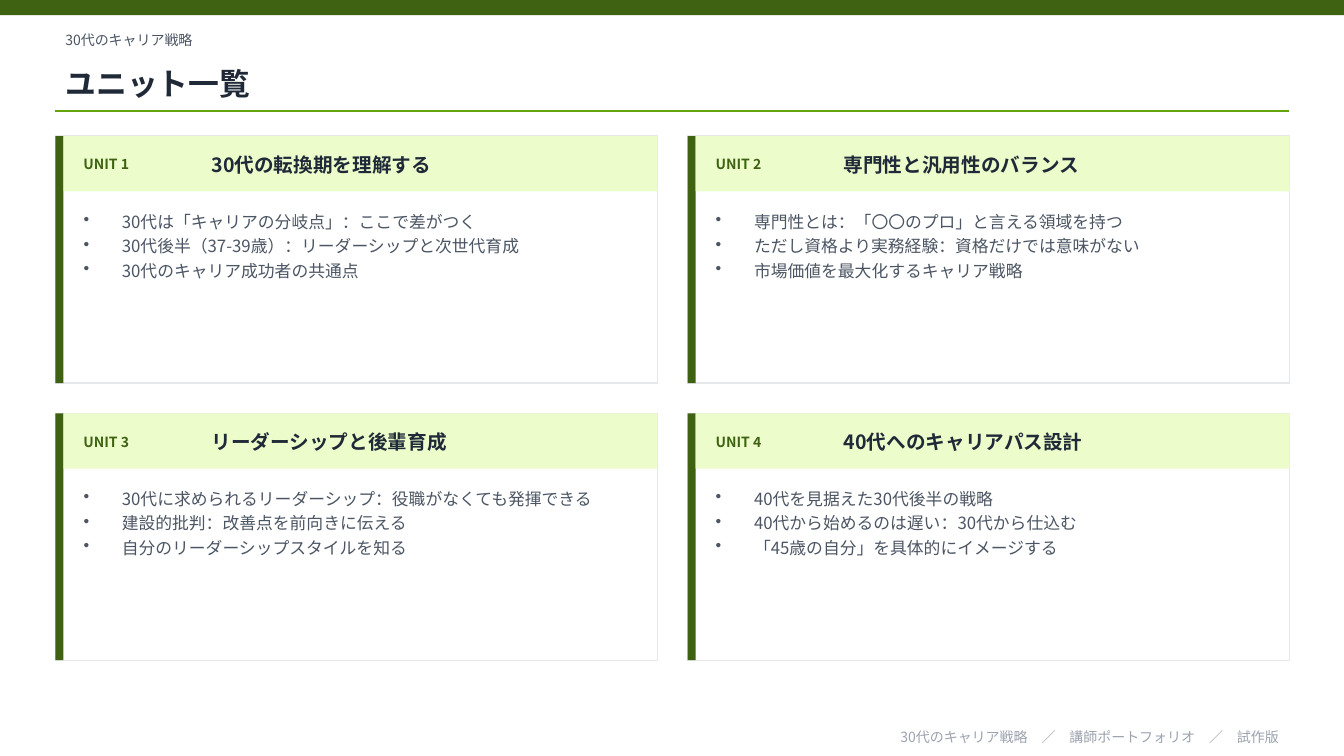
from lxml import etree
from pptx import Presentation
from pptx.dml.color import RGBColor
from pptx.enum.shapes import MSO_CONNECTOR, MSO_SHAPE
from pptx.enum.text import MSO_ANCHOR, MSO_AUTO_SIZE, PP_ALIGN
from pptx.oxml.ns import qn
from pptx.util import Inches, Pt

RECTANGLE = MSO_SHAPE.RECTANGLE
STRAIGHT = MSO_CONNECTOR.STRAIGHT
MIDDLE, TOP = MSO_ANCHOR.MIDDLE, MSO_ANCHOR.TOP
LEFT, RIGHT = PP_ALIGN.LEFT, PP_ALIGN.RIGHT
NO_AUTOFIT = MSO_AUTO_SIZE.NONE

FONT = "Noto Sans CJK JP"
DARK_GREEN = RGBColor(0x3F, 0x62, 0x12)
GREEN = RGBColor(0x65, 0xA3, 0x0D)
PALE_GREEN = RGBColor(0xEC, 0xFC, 0xCB)
WHITE = RGBColor(0xFF, 0xFF, 0xFF)
BORDER = RGBColor(0xE5, 0xE7, 0xEB)
INK = RGBColor(0x1F, 0x29, 0x37)
GRAY = RGBColor(0x4B, 0x55, 0x63)
LIGHT_GRAY = RGBColor(0x9C, 0xA3, 0xAF)

SLIDE_WIDTH = 13.33
MARGIN = 0.55
CONTENT_WIDTH = 12.23
CARDS_TOP = 1.35
CARD_WIDTH, CARD_HEIGHT = 5.97, 2.45
COLUMN_STEP, ROW_STEP = 6.27, 2.75
ACCENT_WIDTH = 0.08
HEADER_HEIGHT = 0.55
BULLET_INDENT = 0.38

UNITS = [
    ("30代の転換期を理解する", [
        "30代は「キャリアの分岐点」：ここで差がつく",
        "30代後半（37-39歳）：リーダーシップと次世代育成",
        "30代のキャリア成功者の共通点",
    ]),
    ("専門性と汎用性のバランス", [
        "専門性とは：「〇〇のプロ」と言える領域を持つ",
        "ただし資格より実務経験：資格だけでは意味がない",
        "市場価値を最大化するキャリア戦略",
    ]),
    ("リーダーシップと後輩育成", [
        "30代に求められるリーダーシップ：役職がなくても発揮できる",
        "建設的批判：改善点を前向きに伝える",
        "自分のリーダーシップスタイルを知る",
    ]),
    ("40代へのキャリアパス設計", [
        "40代を見据えた30代後半の戦略",
        "40代から始めるのは遅い：30代から仕込む",
        "「45歳の自分」を具体的にイメージする",
    ]),
]


def add_run(paragraph, text, size, color, bold=False):
    run = paragraph.add_run()
    run.text = text
    font = run.font
    font.name = FONT
    font.size = Pt(size)
    font.bold = bold
    font.color.rgb = color
    east_asian = etree.SubElement(run._r.get_or_add_rPr(), qn("a:ea"))
    east_asian.set("typeface", FONT)


def prepare_frame(shape, anchor):
    frame = shape.text_frame
    frame.word_wrap = True
    frame.auto_size = NO_AUTOFIT
    frame.vertical_anchor = anchor
    return frame


def add_frame(slide, left, top, width, height, anchor=MIDDLE):
    shape = slide.shapes.add_textbox(Inches(left), Inches(top), Inches(width), Inches(height))
    return prepare_frame(shape, anchor)


def add_label(slide, box, text, size, color, bold=False, alignment=LEFT):
    paragraph = add_frame(slide, *box).paragraphs[0]
    paragraph.alignment = alignment
    add_run(paragraph, text, size, color, bold)


def add_title(slide, text):
    title = slide.shapes.title
    title.left, title.top = Inches(MARGIN), Inches(0.55)
    title.width, title.height = Inches(CONTENT_WIDTH), Inches(0.55)
    paragraph = prepare_frame(title, MIDDLE).paragraphs[0]
    paragraph.alignment = LEFT
    add_run(paragraph, text, 22, INK, True)


def add_rectangle(slide, left, top, width, height, fill, border=None):
    shape = slide.shapes.add_shape(
        RECTANGLE, Inches(left), Inches(top), Inches(width), Inches(height))
    shape.shadow.inherit = False
    shape.fill.solid()
    shape.fill.fore_color.rgb = fill
    if border is None:
        shape.line.fill.background()
    else:
        shape.line.color.rgb = border
        shape.line.width = Pt(1)


def add_rule(slide, left, top, width):
    rule = slide.shapes.add_connector(
        STRAIGHT, Inches(left), Inches(top), Inches(left + width), Inches(top))
    rule.line.color.rgb = GREEN
    rule.line.width = Pt(1)
    etree.SubElement(rule._element.spPr, qn("a:effectLst"))


def add_bullets(slide, left, top, width, height, items):
    frame = add_frame(slide, left, top, width, height, TOP)
    for index, item in enumerate(items):
        paragraph = frame.paragraphs[0] if index == 0 else frame.add_paragraph()
        paragraph.line_spacing = Pt(14.4)
        paragraph.space_after = Pt(3)
        properties = paragraph._p.get_or_add_pPr()
        properties.set("marL", str(Inches(BULLET_INDENT)))
        properties.set("indent", str(-Inches(BULLET_INDENT)))
        etree.SubElement(properties, qn("a:buChar")).set("char", "•")
        add_run(paragraph, item, 12, GRAY)


def add_unit_card(slide, left, top, number, heading, items):
    inner_left = left + ACCENT_WIDTH
    text_left = inner_left + 0.1
    add_rectangle(slide, left, top, CARD_WIDTH, CARD_HEIGHT, WHITE, BORDER)
    add_rectangle(slide, left, top, ACCENT_WIDTH, CARD_HEIGHT, DARK_GREEN)
    add_rectangle(slide, inner_left, top, CARD_WIDTH - ACCENT_WIDTH, HEADER_HEIGHT, PALE_GREEN)
    add_label(slide, (text_left, top + 0.08, 1.2, 0.4), f"UNIT {number}", 10, DARK_GREEN, True)
    add_label(slide, (left + 1.45, top + 0.08, 4.37, 0.4), heading, 14, INK, True)
    add_bullets(slide, text_left, top + 0.7, 5.61, 1.6, items)


def main():
    presentation = Presentation()
    presentation.slide_width = Inches(SLIDE_WIDTH)
    presentation.slide_height = Inches(7.5)
    slide = presentation.slides.add_slide(presentation.slide_layouts.get_by_name("Title Only"))

    add_rectangle(slide, 0, 0, SLIDE_WIDTH, 0.15, DARK_GREEN)
    add_label(slide, (MARGIN, 0.25, CONTENT_WIDTH, 0.3), "30代のキャリア戦略", 10, GRAY)
    add_title(slide, "ユニット一覧")
    add_rule(slide, MARGIN, 1.1, CONTENT_WIDTH)

    for index, (heading, items) in enumerate(UNITS):
        row, column = divmod(index, 2)
        add_unit_card(slide, MARGIN + column * COLUMN_STEP, CARDS_TOP + row * ROW_STEP,
                      index + 1, heading, items)

    add_label(slide, (MARGIN, 7.2, CONTENT_WIDTH, 0.22),
              "30代のキャリア戦略　／　講師ポートフォリオ　／　試作版",
              10, LIGHT_GRAY, alignment=RIGHT)
    presentation.save("out.pptx")


if __name__ == "__main__":
    main()
